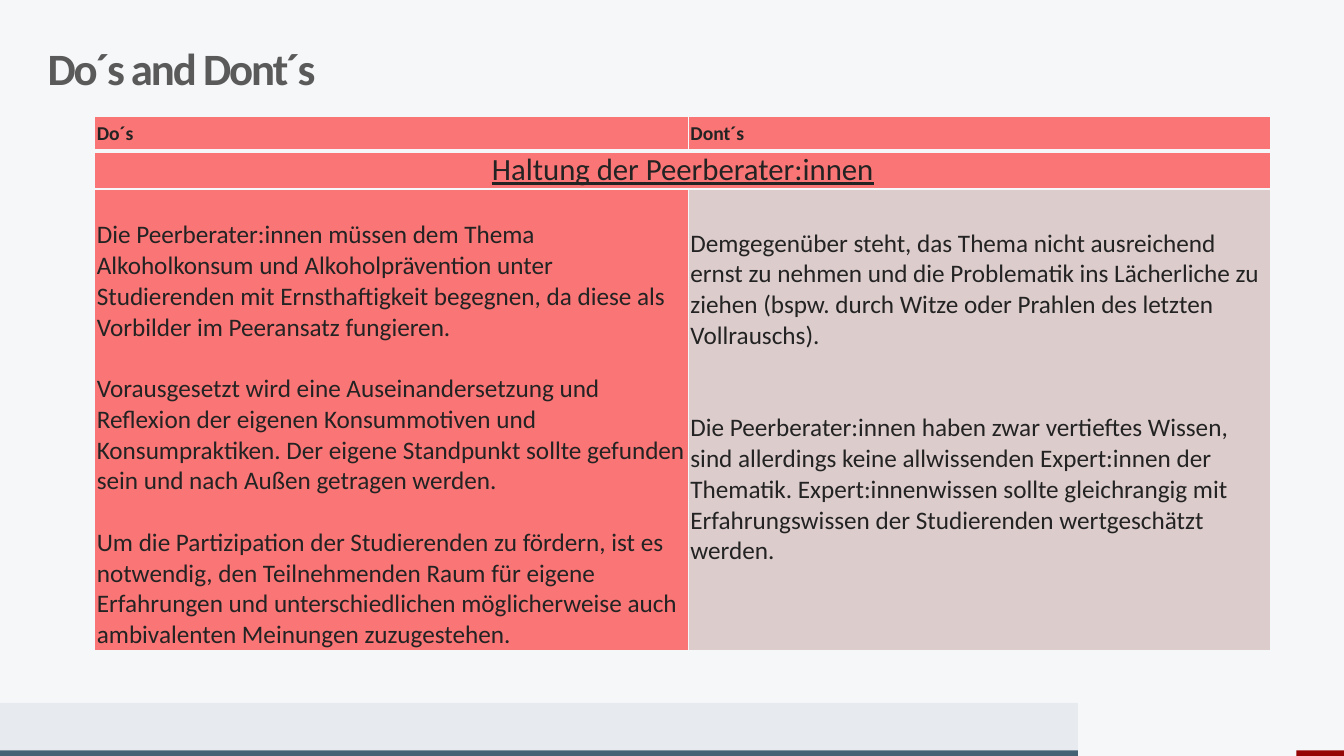
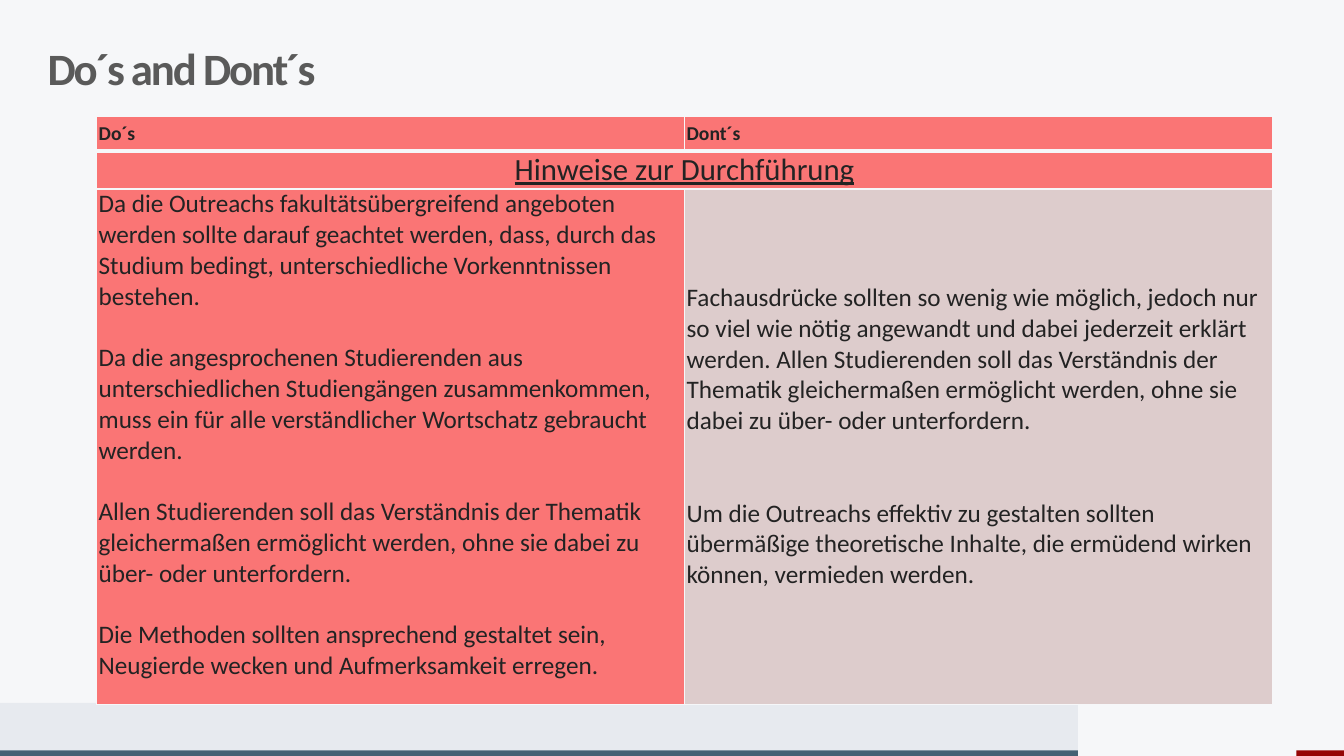
from pptx import Presentation
from pptx.dml.color import RGBColor
from pptx.enum.shapes import MSO_SHAPE as Form
from pptx.enum.text import MSO_ANCHOR as Anchor, PP_ALIGN as Align
from pptx.oxml import parse_xml
from pptx.oxml.ns import nsdecls
from pptx.util import Pt

PALE = RGBColor(0xF6, 0xF7, 0xF9)
MIST = RGBColor(0xE7, 0xEA, 0xEF)
SLATE = RGBColor(0x45, 0x61, 0x74)
WINE = RGBColor(0x95, 0x05, 0x05)
GREY = RGBColor(0x5A, 0x5A, 0x5A)
INK = RGBColor(0x23, 0x23, 0x23)
CORAL = RGBColor(0xFA, 0x75, 0x75)
ROSE = RGBColor(0xDD, 0xCC, 0xCC)

FONT = "Calibri"
TITLE = "Do´s and Dont´s"
BANDS = [
    (0, 502, 770, 34, MIST),
    (0, 536, 770, 4, SLATE),
    (926, 536, 34, 4, WINE),
]
SIZES = [14, 22, 18]

PAGES = [
    {
        "head": "Haltung der Peerberater:innen",
        "left": 67.7, "cols": [424, 416], "high": 330,
        "tops": [22, 28],
        "dos": [
            "Die Peerberater:innen müssen dem Thema Alkoholkonsum und "
            "Alkoholprävention unter Studierenden mit Ernsthaftigkeit begegnen, "
            "da diese als Vorbilder im Peeransatz fungieren.",
            "Vorausgesetzt wird eine Auseinandersetzung und Reflexion der eigenen "
            "Konsummotiven und Konsumpraktiken. Der eigene Standpunkt sollte "
            "gefunden sein und nach Außen getragen werden.",
            "Um die Partizipation der Studierenden zu fördern, ist es notwendig, "
            "den Teilnehmenden Raum für eigene Erfahrungen und unterschiedlichen "
            "möglicherweise auch ambivalenten Meinungen zuzugestehen.",
        ],
        "donts": [
            "Demgegenüber steht, das Thema nicht ausreichend ernst zu nehmen und "
            "die Problematik ins Lächerliche zu ziehen (bspw. durch Witze oder "
            "Prahlen des letzten Vollrauschs).",
            "Die Peerberater:innen haben zwar vertieftes Wissen, sind allerdings "
            "keine allwissenden Expert:innen der Thematik. Expert:innenwissen "
            "sollte gleichrangig mit Erfahrungswissen der Studierenden "
            "wertgeschätzt werden.",
        ],
    },
    {
        "head": "Hinweise zur Durchführung",
        "left": 69, "cols": [420, 420], "high": 368.5,
        "tops": [0, 67],
        "dos": [
            "Da die Outreachs fakultätsübergreifend angeboten werden sollte darauf "
            "geachtet werden, dass, durch das Studium bedingt, unterschiedliche "
            "Vorkenntnissen bestehen.",
            "Da die angesprochenen Studierenden aus unterschiedlichen "
            "Studiengängen zusammenkommen, muss ein für alle verständlicher "
            "Wortschatz gebraucht werden.",
            "Allen Studierenden soll das Verständnis der Thematik gleichermaßen "
            "ermöglicht werden, ohne sie dabei zu über- oder unterfordern.",
            "Die Methoden sollten ansprechend gestaltet sein, Neugierde wecken und "
            "Aufmerksamkeit erregen.",
        ],
        "donts": [
            "Fachausdrücke sollten so wenig wie möglich, jedoch nur so viel wie "
            "nötig angewandt und dabei jederzeit erklärt werden. Allen "
            "Studierenden soll das Verständnis der Thematik gleichermaßen "
            "ermöglicht werden, ohne sie dabei zu über- oder unterfordern.",
            "Um die Outreachs effektiv zu gestalten sollten übermäßige "
            "theoretische Inhalte, die ermüdend wirken können, vermieden werden.",
        ],
    },
]


def add_run(para, text, size, color, bold):
    run = para.add_run()
    run.text = text
    font = run.font
    font.name = FONT
    font.size = Pt(size)
    font.bold = bold
    font.color.rgb = color
    return run


def set_edges(cell, row):
    props = cell._tc.get_or_add_tcPr()
    wide = {"T": 3 if row == 1 else 1, "B": 3 if row == 0 else 1}
    for side in "LRTB":
        props.append(parse_xml(
            f'<a:ln{side} {nsdecls("a")} w="{Pt(wide.get(side, 1))}">'
            f'<a:solidFill><a:srgbClr val="{PALE}"/></a:solidFill></a:ln{side}>'))


prs = Presentation()
prs.slide_width, prs.slide_height = Pt(960), Pt(540)
back = prs.slide_master.background.fill
back.solid()
back.fore_color.rgb = PALE

for page in PAGES:
    slide = prs.slides.add_slide(prs.slide_layouts[6])
    shapes = slide.shapes

    for *box, color in BANDS:
        band = shapes.add_shape(Form.RECTANGLE, *map(Pt, box))
        band.shadow.inherit = False
        band.fill.solid()
        band.fill.fore_color.rgb = color
        band.line.fill.background()

    frame = shapes.add_textbox(Pt(34), Pt(34), Pt(892), Pt(34)).text_frame
    frame.word_wrap = True
    frame.vertical_anchor = Anchor.MIDDLE
    frame.margin_left = frame.margin_right = 0
    frame.margin_top = frame.margin_bottom = 0
    para = frame.paragraphs[0]
    para.line_spacing = 0.9
    run = add_run(para, TITLE, 32, GREY, True)
    run.font._element.set("spc", "-150")

    highs = [25, 27, page["high"]]
    table = shapes.add_table(3, 2, Pt(page["left"]), Pt(83),
                             Pt(sum(page["cols"])), Pt(sum(highs))).table
    for col, width in zip(table.columns, page["cols"]):
        col.width = Pt(width)
    table.cell(1, 0).merge(table.cell(1, 1))

    rows = [
        [["Do´s"], ["Dont´s"]],
        [[page["head"]], []],
        [page["dos"], page["donts"]],
    ]
    for r, texts in enumerate(rows):
        table.rows[r].height = Pt(highs[r])
        for c, paras in enumerate(texts):
            cell = table.cell(r, c)
            set_edges(cell, r)
            cell.fill.solid()
            cell.fill.fore_color.rgb = ROSE if (r, c) == (2, 1) else CORAL
            cell.margin_left = cell.margin_right = Pt(1.5)
            cell.margin_top = Pt(page["tops"][c] if r == 2 else 0)
            cell.margin_bottom = 0
            cell.vertical_anchor = Anchor.TOP if r == 2 else Anchor.MIDDLE
            frame = cell.text_frame
            for i, text in enumerate(paras):
                para = frame.add_paragraph() if i else frame.paragraphs[0]
                if i:
                    para.space_before = Pt(44 if c else 22)
                if r == 1:
                    para.alignment = Align.CENTER
                run = add_run(para, text, SIZES[r], INK, r == 0)
                run.font.underline = r == 1

prs.save("out.pptx")
